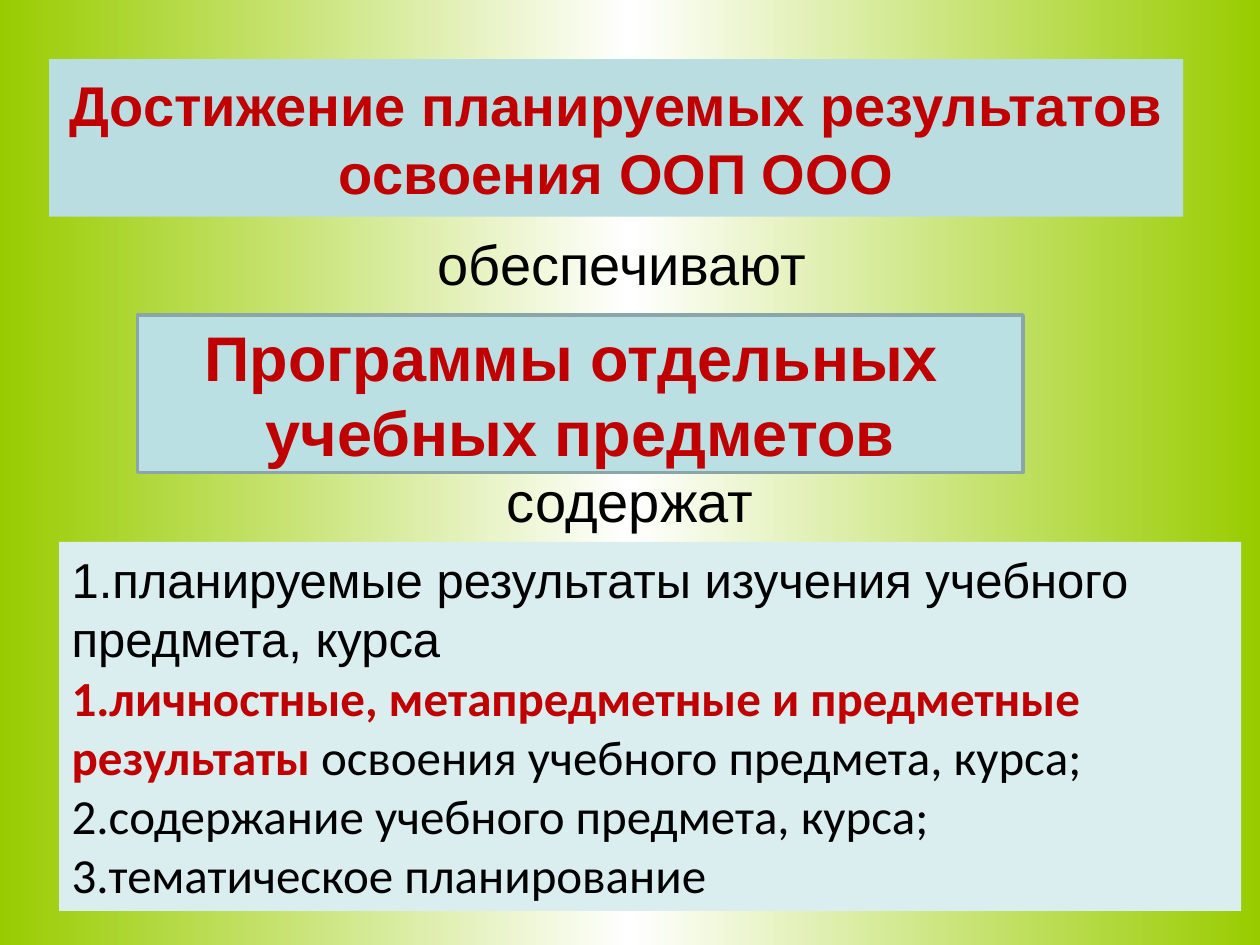
from copy import deepcopy
from dataclasses import dataclass, field
from typing import Optional

from pptx import Presentation
from pptx import util as u
from pptx.dml.color import RGBColor
from pptx.enum import shapes, text
from pptx.oxml.ns import qn
from pptx.oxml.xmlchemy import OxmlElement


@dataclass(frozen=True)
class Theme:
    """Colours, fonts and type sizes of the slide."""
    edge: str = "99CC00"
    middle: str = "FFFFFF"
    title_fill: str = "BADDE1"
    program_fill: str = "BBE0E3"
    program_line: str = "8AA6A8"
    list_fill: str = "DAEDEF"
    accent: str = "C00000"
    ink: str = "000000"
    sans: str = "Arial"
    body: str = "Calibri"
    title_size: int = 32
    program_size: int = 36
    list_size: int = 28


T = Theme()


@dataclass(frozen=True)
class Run:
    """A piece of text with one format."""
    text: str
    size: int
    color: str = T.ink
    name: str = T.sans
    bold: bool = False


@dataclass(frozen=True)
class Para:
    """A paragraph, numbered or plain."""
    runs: list[Run]
    numbered: bool = False


@dataclass(frozen=True)
class Block:
    """A rectangle of text, filled or clear."""
    at: tuple[float, float, float, float]
    paras: list[Para] = field(default_factory=list)
    fill: Optional[str] = None
    line: Optional[str] = None
    align: text.PP_ALIGN = text.PP_ALIGN.CENTER


def rgb(color: str) -> RGBColor:
    """Turn a hex string into a colour."""
    return RGBColor.from_string(color)


def set_attrs(obj: object, values: dict) -> None:
    """Set each attribute named in the dict."""
    for key, value in values.items():
        setattr(obj, key, value)


def paint_background(s) -> None:
    """Fill the slide with a mirrored horizontal gradient."""
    fill = s.background.fill
    fill.gradient()
    fill.gradient_angle = 0
    stops = s.background._cSld.find(".//" + qn("a:gsLst"))
    stops.insert(1, deepcopy(stops[0]))
    colors = (T.edge, T.middle, T.edge)
    for stop, color, position in zip(fill.gradient_stops, colors, (0, 0.5, 1)):
        stop.color.rgb = rgb(color)
        stop.position = position


def add_para(p, para: Para, align: text.PP_ALIGN) -> None:
    """Write the runs of one paragraph."""
    p.alignment = align
    if para.numbered:
        pPr = p._p.get_or_add_pPr()
        pPr.set("marL", "0")
        pPr.set("indent", "0")
        number = OxmlElement("a:buAutoNum")
        number.set("type", "arabicPeriod")
        pPr.append(number)
    for run in para.runs:
        r = p.add_run()
        r.text = run.text
        set_attrs(r.font, {"name": run.name, "size": u.Pt(run.size), "bold": run.bold})
        r.font.color.rgb = rgb(run.color)


def add_block(s, block: Block) -> None:
    """Draw one block and its text."""
    box = [u.Inches(v) for v in block.at]
    if block.fill:
        sp = s.shapes.add_shape(shapes.MSO_SHAPE.RECTANGLE, *box)
        sp.shadow.inherit = False
        sp.fill.solid()
        sp.fill.fore_color.rgb = rgb(block.fill)
        if block.line:
            sp.line.color.rgb = rgb(block.line)
            sp.line.width = u.Pt(2)
        else:
            sp.line.fill.background()
    else:
        sp = s.shapes.add_textbox(*box)
    tf = sp.text_frame
    set_attrs(tf, {"word_wrap": True, "vertical_anchor": text.MSO_ANCHOR.MIDDLE})
    for i, para in enumerate(block.paras):
        add_para(tf.add_paragraph() if i else tf.paragraphs[0], para, block.align)


def heading(words: str, size: int) -> Para:
    """Make a bold accent paragraph."""
    return Para([Run(words, size, T.accent, bold=True)])


def item(*runs: Run) -> Para:
    """Make a numbered paragraph."""
    return Para(list(runs), numbered=True)


def body(words: str, color: str = T.ink, bold: bool = False) -> Run:
    """Make a run of list text."""
    return Run(words, T.list_size, color, T.body, bold)


BLOCKS = [
    Block((0.39, 0.47, 9, 1.25),
          [heading("Достижение планируемых результатов освоения ООП ООО", T.title_size)],
          T.title_fill),
    Block((0.5, 1.79, 9, 0.6), [Para([Run("обеспечивают ", T.title_size)])]),
    Block((0.5, 3.67, 9, 0.6), [Para([Run("содержат", T.title_size)])]),
    Block((1.09, 2.5, 7.03, 1.25),
          [heading("Программы отдельных ", T.program_size),
           heading("учебных предметов", T.program_size)],
          T.program_fill, T.program_line),
    Block((0.47, 4.3, 9.38, 2.93),
          [Para([Run("1.планируемые результаты изучения учебного предмета, курса", T.list_size)]),
           item(body("личностные, метапредметные и предметные результаты ", T.accent, True),
                body("освоения учебного предмета, курса;")),
           item(body("содержание учебного предмета, курса;")),
           item(body("тематическое планирование"))],
          T.list_fill, align=text.PP_ALIGN.LEFT),
]


def main() -> None:
    """Build the slide and save it."""
    prs = Presentation()
    set_attrs(prs, {"slide_width": u.Inches(10), "slide_height": u.Inches(7.5)})
    s = prs.slides.add_slide(prs.slide_layouts[6])
    paint_background(s)
    for block in BLOCKS:
        add_block(s, block)
    prs.save("out.pptx")


if __name__ == "__main__":
    main()
